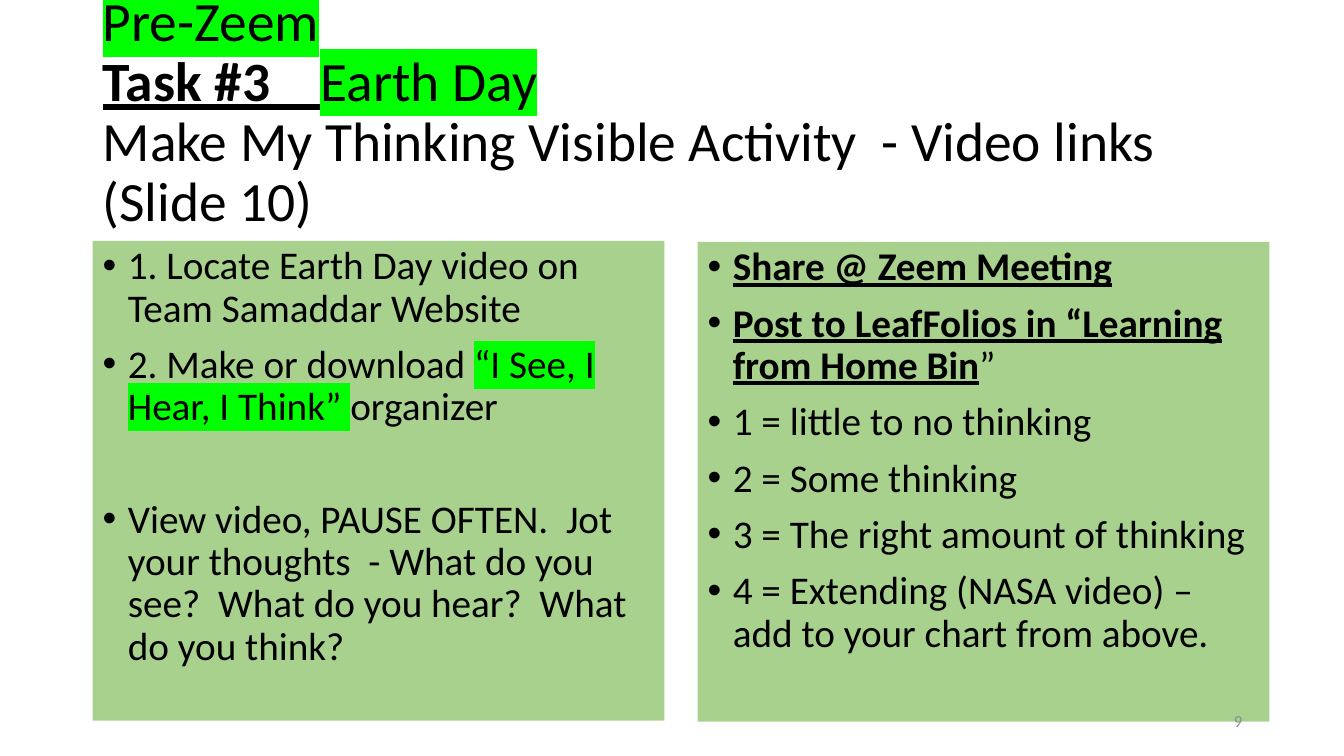
import pptx
import pptx.dml.color
import pptx.enum.shapes
import pptx.enum.text
import pptx.oxml.ns
import pptx.util
from lxml import etree
from pptx.util import Inches

FONT = "Calibri"
BLACK = "000000"
GREY = "8C8C8C"
PANEL_GREEN = "A9D18E"
MARKER_GREEN = "00FF00"
PANEL_SIZE = (5.67, 4.76)
ANCHOR = pptx.enum.text.MSO_ANCHOR
ALIGN = pptx.enum.text.PP_ALIGN

TITLE_LINES = [
    [("Pre-Zeem", "marked")],
    [("Task #3    ", "strong"), ("Earth Day", "marked")],
    [("Make My Thinking Visible Activity  - Video links (Slide 10)", "plain")],
]
TASK_STEPS = [
    [("1. Locate Earth Day video on Team Samaddar Website", "plain")],
    [("2. Make or download ", "plain"),
     ("“I See, I Hear, I Think” ", "marked"),
     ("organizer", "plain")],
    [("View video, PAUSE OFTEN.  Jot your thoughts  - What do you see?  "
      "What do you hear?  What do you think?", "plain")],
]
SHARING_STEPS = [
    [("Share @ Zeem Meeting", "strong")],
    [("Post to LeafFolios in “Learning from Home Bin", "strong"), ("”", "plain")],
    [("1 = little to no thinking", "plain")],
    [("2 = Some thinking", "plain")],
    [("3 = The right amount of thinking", "plain")],
    [("4 = Extending (NASA video) – add to your chart from above.", "plain")],
]


def color(value):
    """Turn a hex string into a colour."""
    return pptx.dml.color.RGBColor.from_string(value)


def add_element(parent, tag, **attributes):
    """Append a drawing element to a parent."""
    return etree.SubElement(parent, pptx.oxml.ns.qn(tag), attributes)


def set_font(paragraph, size, value):
    """Set the font shared by all runs of a paragraph."""
    paragraph.font.name = FONT
    paragraph.font.size = pptx.util.Pt(size)
    paragraph.font.color.rgb = color(value)


def add_runs(paragraph, pieces):
    """Add plain, strong or marked runs to a paragraph."""
    for text, style in pieces:
        run = paragraph.add_run()
        run.text = text
        if style == "strong":
            run.font.bold = True
            run.font.underline = True
        elif style == "marked":
            highlight = add_element(run._r.get_or_add_rPr(), "a:highlight")
            add_element(highlight, "a:srgbClr", val=MARKER_GREEN)


def add_text_box(slide, left, top, width, height):
    """Add a wrapping, vertically centred box and return its first paragraph."""
    box = slide.shapes.add_textbox(
        Inches(left), Inches(top), Inches(width), Inches(height))
    box.text_frame.word_wrap = True
    box.text_frame.vertical_anchor = ANCHOR.MIDDLE
    return box.text_frame.paragraphs[0]


def add_title(slide):
    """Add the title with its line breaks."""
    paragraph = add_text_box(slide, 0.92, 0.4, 11.5, 1.45)
    paragraph.line_spacing = 0.9
    set_font(paragraph, 39.6, BLACK)
    for index, pieces in enumerate(TITLE_LINES):
        if index:
            paragraph.add_line_break()
        add_runs(paragraph, pieces)


def add_panel(slide, left, top, items):
    """Add a green panel with a bulleted list and return its paragraphs."""
    width, height = PANEL_SIZE
    panel = slide.shapes.add_shape(
        pptx.enum.shapes.MSO_SHAPE.RECTANGLE,
        Inches(left), Inches(top), Inches(width), Inches(height))
    panel.shadow.inherit = False
    panel.fill.solid()
    panel.fill.fore_color.rgb = color(PANEL_GREEN)
    panel.line.fill.background()
    frame = panel.text_frame
    frame.word_wrap = True
    frame.vertical_anchor = ANCHOR.TOP
    for index, pieces in enumerate(items):
        paragraph = frame.add_paragraph() if index else frame.paragraphs[0]
        paragraph.alignment = ALIGN.LEFT
        paragraph.line_spacing = 0.9
        paragraph.space_before = pptx.util.Pt(10 if index else 0)
        properties = paragraph._p.get_or_add_pPr()
        properties.set("marL", str(Inches(0.25)))
        properties.set("indent", str(Inches(-0.25)))
        add_element(properties, "a:buFont", typeface="Arial")
        add_element(properties, "a:buChar", char="•")
        set_font(paragraph, 28, BLACK)
        add_runs(paragraph, pieces)
    return frame.paragraphs


def add_slide_number(slide):
    """Add the slide number."""
    paragraph = add_text_box(slide, 9.42, 6.95, 3, 0.4)
    paragraph.alignment = ALIGN.RIGHT
    set_font(paragraph, 12, GREY)
    add_runs(paragraph, [("9", "plain")])


def main():
    """Build and save the slide."""
    presentation = pptx.Presentation()
    presentation.slide_width = Inches(13.33)
    presentation.slide_height = Inches(7.5)
    slide = presentation.slides.add_slide(presentation.slide_layouts[6])
    add_title(slide)
    task_paragraphs = add_panel(slide, 0.92, 2.39, TASK_STEPS)
    task_paragraphs[-1].space_before = pptx.util.Pt(50)
    add_panel(slide, 6.92, 2.4, SHARING_STEPS)
    add_slide_number(slide)
    presentation.save("out.pptx")


if __name__ == "__main__":
    main()
